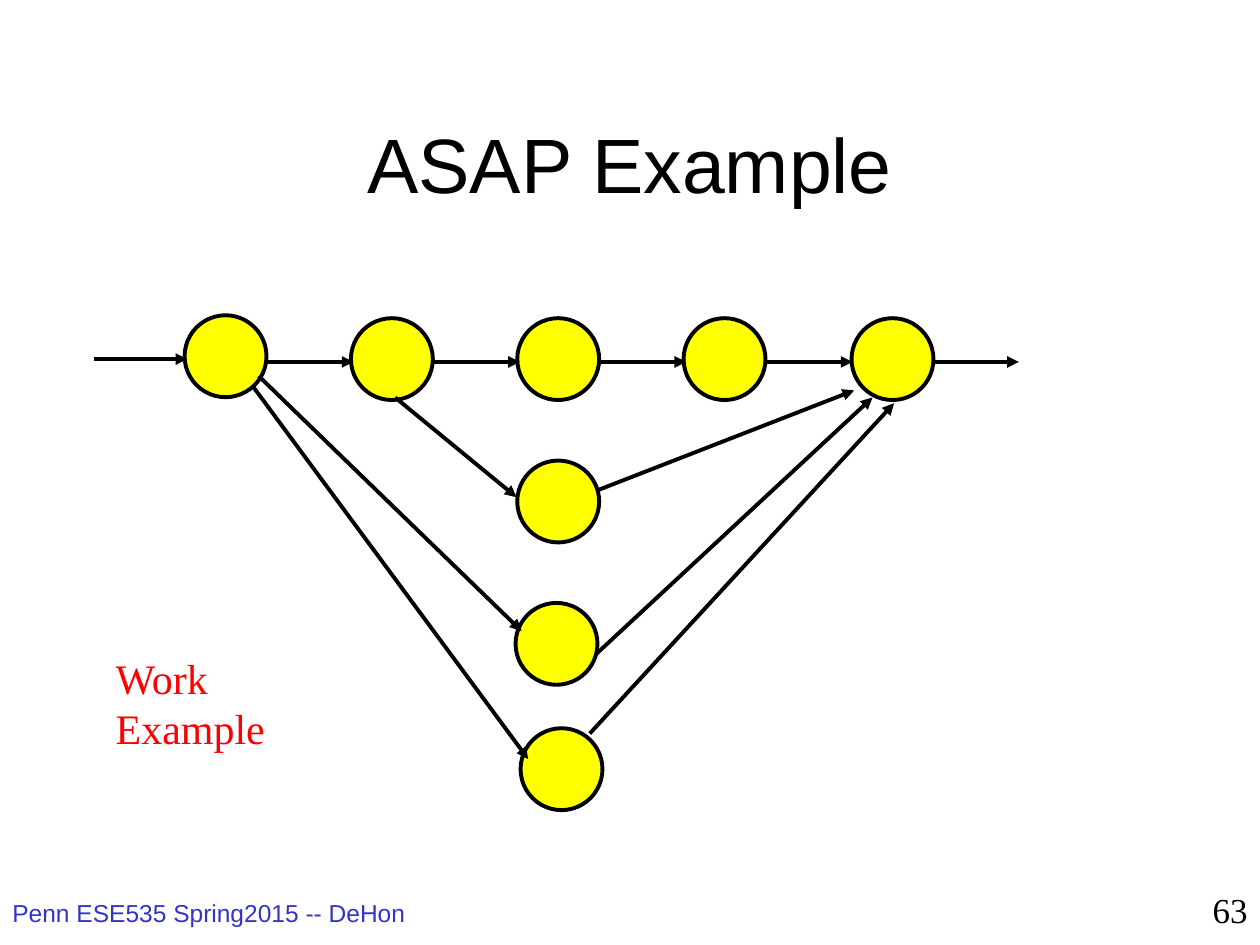
from lxml.etree import SubElement
from pptx import Presentation
from pptx.dml.color import RGBColor
from pptx.enum.shapes import MSO_CONNECTOR, MSO_SHAPE
from pptx.enum.text import MSO_ANCHOR, MSO_AUTO_SIZE, PP_ALIGN
from pptx.oxml.ns import qn
from pptx.util import Inches, Pt

COLORS = {"ink": "000000", "node": "FFFF00", "footer": "3333CC", "note": "FF0000"}

# Grid of the graph, in inches: column 0, row 0 is the centre of the first node.
LEFT, TOP = 1.79, 2.85
COLUMN, ROW = 1.32, 1.13
DIAMETER = 0.65
LINE_WIDTH = 2.25

# Node centres as (column, row).
NODES = [
    (0, -0.02), (1, 0), (2, 0), (3, 0), (4.01, 0),
    (2, 1), (1.99, 2), (2.02, 2.88),
]

# Arrows as (from, to), each end a (column, row).
CHAIN_ROW = 0.02
CHAIN_ARROWS = [
    ((column + 0.25, CHAIN_ROW), (column + 0.77, CHAIN_ROW)) for column in range(5)
]
ENTRY_ARROW = ((-0.79, 0), (-0.23, 0))
BRANCH_ARROWS = [
    ((1.02, 0.27), (1.75, 0.97)),
    ((0.2, 0.12), (1.78, 1.91)),
    ((0.17, 0.2), (1.82, 2.81)),
]
MERGE_ARROWS = [
    ((2.24, 0.92), (3.78, 0.22)),
    ((2.23, 2.07), (3.89, 0.27)),
    ((2.19, 2.63), (4.02, 0.31)),
]


def color(name):
    return RGBColor.from_string(COLORS[name])


def grid_point(column, row):
    return Inches(LEFT + column * COLUMN), Inches(TOP + row * ROW)


def format_text(text_frame, size, font_name, color_name, alignment):
    for paragraph in text_frame.paragraphs:
        paragraph.alignment = alignment
        for run in paragraph.runs:
            run.font.size = Pt(size)
            run.font.name = font_name
            run.font.color.rgb = color(color_name)


def format_line(line):
    line.color.rgb = color("ink")
    line.width = Pt(LINE_WIDTH)


def add_title(slide, text):
    title = slide.shapes.title
    title.left, title.top = Inches(0.75), Inches(0.67)
    title.width, title.height = Inches(8.5), Inches(1.25)
    title.text_frame.text = text
    title.text_frame.vertical_anchor = MSO_ANCHOR.MIDDLE
    format_text(title.text_frame, 44, "Arial", "ink", PP_ALIGN.CENTER)


def add_label(slide, text, box, size, font_name, color_name,
              alignment=PP_ALIGN.LEFT, grow=False):
    """Add a text box; with grow, it fits its unwrapped lines."""
    text_frame = slide.shapes.add_textbox(*map(Inches, box)).text_frame
    text_frame.word_wrap = not grow
    text_frame.auto_size = (
        MSO_AUTO_SIZE.SHAPE_TO_FIT_TEXT if grow else MSO_AUTO_SIZE.NONE)
    text_frame.text = text
    format_text(text_frame, size, font_name, color_name, alignment)


def add_node(slide, column, row):
    center_x, center_y = grid_point(column, row)
    size = Inches(DIAMETER)
    node = slide.shapes.add_shape(
        MSO_SHAPE.OVAL, center_x - size // 2, center_y - size // 2, size, size)
    node.shadow.inherit = False
    node.fill.solid()
    node.fill.fore_color.rgb = color("node")
    format_line(node.line)


def add_arrow(slide, start, end):
    arrow = slide.shapes.add_connector(
        MSO_CONNECTOR.STRAIGHT, *grid_point(*start), *grid_point(*end))
    format_line(arrow.line)
    properties = arrow._element.spPr
    SubElement(properties.find(qn("a:ln")), qn("a:tailEnd"), type="triangle")
    SubElement(properties, qn("a:effectLst"))


def main():
    presentation = Presentation()
    presentation.slide_width, presentation.slide_height = Inches(10), Inches(7.5)
    slide = presentation.slides.add_slide(presentation.slide_layouts[5])

    add_title(slide, "ASAP Example")
    for node in NODES:
        add_node(slide, *node)
    for start, end in [ENTRY_ARROW, *CHAIN_ARROWS, *BRANCH_ARROWS, *MERGE_ARROWS]:
        add_arrow(slide, start, end)

    add_label(slide, "Work\nExample", (0.82, 5.13, 1.4, 0.9),
              24, "Times New Roman", "note", grow=True)
    add_label(slide, "Penn ESE535 Spring2015 -- DeHon", (0, 7.08, 3.83, 0.42),
              14, "Arial", "footer")
    add_label(slide, "63", (7.92, 7, 2.08, 0.5),
              20, "Times New Roman", "ink", PP_ALIGN.RIGHT)

    presentation.save("out.pptx")


if __name__ == "__main__":
    main()
